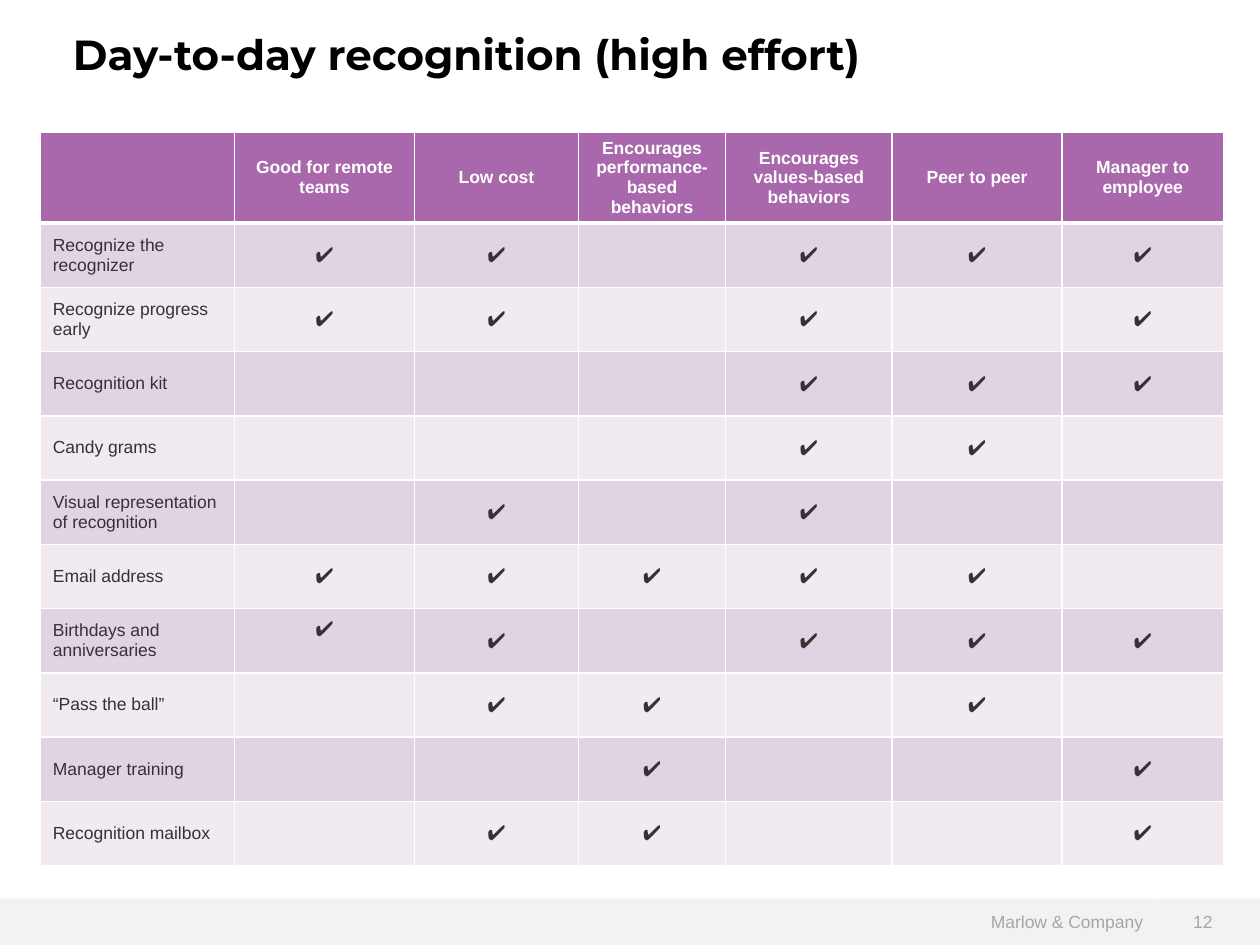
from lxml.etree import SubElement
from pptx import Presentation
from pptx.dml.color import RGBColor
from pptx.enum.shapes import MSO_SHAPE as Shape
from pptx.enum.text import MSO_ANCHOR as Anchor, PP_ALIGN as Align
from pptx.oxml.ns import qn
from pptx.util import Inches, Pt

WHITE = RGBColor(0xFF, 0xFF, 0xFF)
BLACK = RGBColor(0x00, 0x00, 0x00)
CHARCOAL = RGBColor(0x33, 0x33, 0x33)
PURPLE = RGBColor(0xA8, 0x68, 0xAB)
LILAC = RGBColor(0xE1, 0xD4, 0xE2)
PALE_LILAC = RGBColor(0xF1, 0xEB, 0xF1)
FOOTER_FILL = RGBColor(0xF2, 0xF2, 0xF2)
FOOTER_TEXT = RGBColor(0xA6, 0xA6, 0xA6)

TITLE_FONT = {"name": "Montserrat", "size": Pt(24), "bold": True}
HEADER_FONT = {"name": "Arial", "size": Pt(10), "bold": True}
LABEL_FONT = {"name": "Arial", "size": Pt(10), "bold": False}
CHECK_FONT = {"name": "Arial", "size": Pt(12), "bold": False}

CHECK = "✔"
COLUMN_WIDTHS = [1.54, 1.43, 1.3, 1.17, 1.32, 1.35, 1.28]
HEADER_HEIGHT, ROW_HEIGHT = 0.52, 0.51
CRITERIA = [
    "Good for remote teams",
    "Low cost",
    "Encourages performance-based behaviors",
    "Encourages values-based behaviors",
    "Peer to peer",
    "Manager to employee",
]
ACTIVITIES = [
    ("Recognize the recognizer", {1, 2, 4, 5, 6}),
    ("Recognize progress early", {1, 2, 4, 6}),
    ("Recognition kit", {4, 5, 6}),
    ("Candy grams", {4, 5}),
    ("Visual representation of recognition", {2, 4}),
    ("Email address", {1, 2, 3, 4, 5}),
    ("Birthdays and anniversaries", {1, 2, 4, 5, 6}),
    ("“Pass the ball”", {2, 3, 5}),
    ("Manager training", {3, 6}),
    ("Recognition mailbox", {2, 3, 6}),
]
RAISED_CHECK = (7, 1)


def write_text(frame, text, font_format, color, align=Align.LEFT):
    """Write one formatted paragraph into a text frame."""
    paragraph = frame.paragraphs[0]
    paragraph.alignment = align
    run = paragraph.add_run()
    run.text = text
    for attribute, value in font_format.items():
        setattr(run.font, attribute, value)
    run.font.color.rgb = color


def add_title(slide, left, top, width, height):
    """Place the slide title in the given box."""
    frame = slide.shapes.add_textbox(left, top, width, height).text_frame
    frame.word_wrap = True
    write_text(frame, "Day-to-day recognition (high effort)", TITLE_FONT, BLACK)


def add_footer_part(slide, box, text, align, indent):
    """Place one grey footer panel with its text."""
    panel = slide.shapes.add_shape(Shape.RECTANGLE, *box)
    panel.shadow.inherit = False
    panel.fill.solid()
    panel.fill.fore_color.rgb = FOOTER_FILL
    panel.line.fill.background()
    frame = panel.text_frame
    frame.word_wrap = True
    frame.vertical_anchor = Anchor.MIDDLE
    frame.margin_left = indent
    write_text(frame, text, LABEL_FONT, FOOTER_TEXT, align)


def add_footer(slide, left, top, width, height):
    """Place the company name and page number along the given strip."""
    number_width = Inches(0.83)
    name_width = width - number_width
    add_footer_part(slide, (left, top, name_width, height),
                    "Marlow & Company", Align.RIGHT, Inches(0.1))
    add_footer_part(slide, (left + name_width, top, number_width, height),
                    "12", Align.LEFT, Inches(0.3))


def style_cell(cell, color, top_width=1, bottom_width=1):
    """Give a cell its white borders, fill and middle anchor."""
    properties = cell._tc.get_or_add_tcPr()
    widths = {"lnL": 1, "lnR": 1, "lnT": top_width, "lnB": bottom_width}
    for edge, width in widths.items():
        line = SubElement(properties, qn(f"a:{edge}"), w=str(Pt(width)))
        fill = SubElement(line, qn("a:solidFill"))
        SubElement(fill, qn("a:srgbClr"), val=str(WHITE))
    cell.fill.solid()
    cell.fill.fore_color.rgb = color
    cell.vertical_anchor = Anchor.MIDDLE


def add_recognition_table(slide, left, top, width, height):
    """Place the matrix of activities against criteria."""
    table = slide.shapes.add_table(
        len(ACTIVITIES) + 1, len(COLUMN_WIDTHS), left, top, width, height).table
    for column, column_width in zip(table.columns, COLUMN_WIDTHS):
        column.width = Inches(column_width)
    for row in table.rows:
        row.height = Inches(ROW_HEIGHT)
    table.rows[0].height = Inches(HEADER_HEIGHT)

    for column, criterion in enumerate(["", *CRITERIA]):
        cell = table.cell(0, column)
        style_cell(cell, PURPLE, bottom_width=3)
        if criterion:
            write_text(cell.text_frame, criterion, HEADER_FONT, WHITE, Align.CENTER)

    for row, (activity, checked) in enumerate(ACTIVITIES, start=1):
        for column in range(len(COLUMN_WIDTHS)):
            cell = table.cell(row, column)
            style_cell(cell, LILAC if row % 2 else PALE_LILAC,
                       top_width=3 if row == 1 else 1)
            if column == 0:
                write_text(cell.text_frame, activity, LABEL_FONT, CHARCOAL)
            elif column in checked:
                write_text(cell.text_frame, CHECK, CHECK_FONT, CHARCOAL, Align.CENTER)
    table.cell(*RAISED_CHECK).margin_bottom = Inches(0.24)


def main():
    """Build and save the slide."""
    deck = Presentation()
    deck.slide_width, deck.slide_height = Inches(10), Inches(7.5)
    slide = deck.slides.add_slide(deck.slide_layouts[6])
    add_footer(slide, Inches(0), Inches(7.13), Inches(10), Inches(0.37))
    add_recognition_table(slide, Inches(0.32), Inches(1.05), Inches(9.4), Inches(5.88))
    add_title(slide, Inches(0.48), Inches(0.18), Inches(8.63), Inches(0.61))
    deck.save("out.pptx")


if __name__ == "__main__":
    main()
